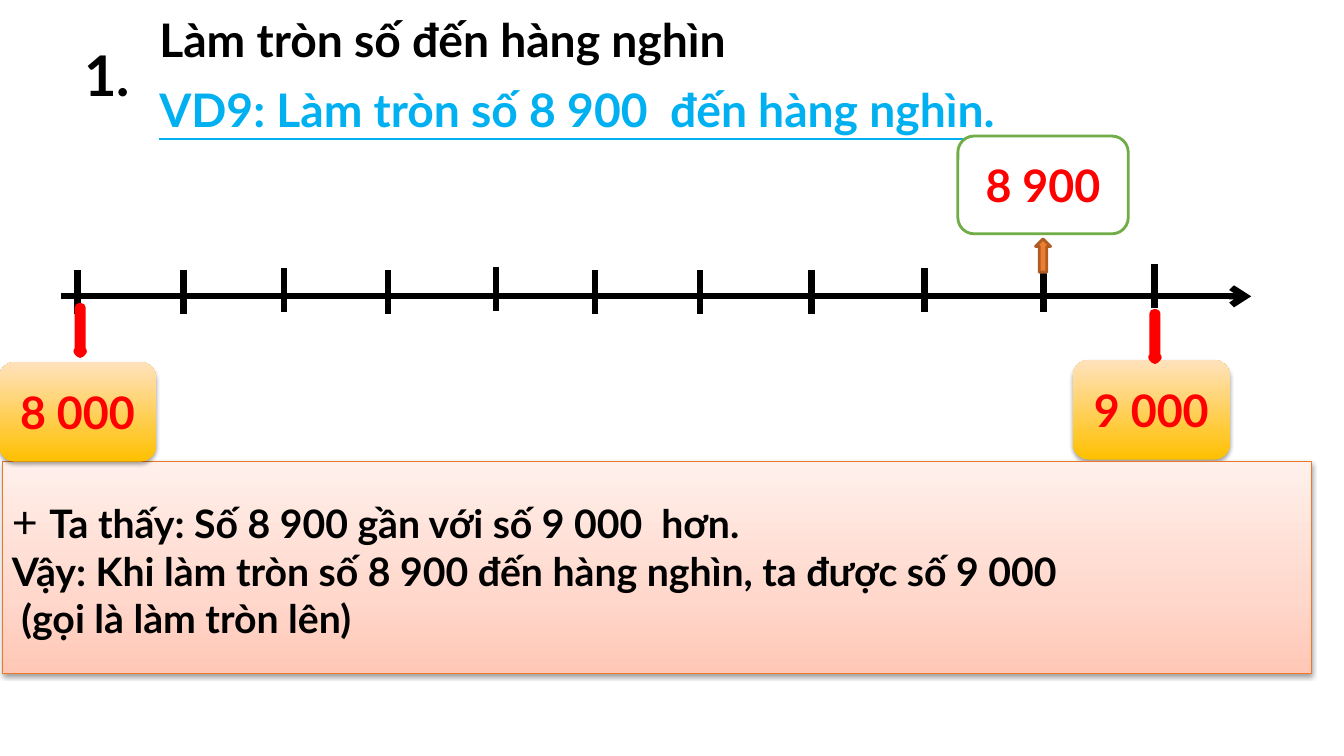
import pptx
import pptx.dml.color
import pptx.enum.shapes
import pptx.enum.text
import pptx.oxml
import pptx.oxml.ns
import pptx.util
from pptx.util import Inches

SHAPES = pptx.enum.shapes.MSO_SHAPE
ALIGN = pptx.enum.text.PP_ALIGN
ANCHOR = pptx.enum.text.MSO_ANCHOR
QN = pptx.oxml.ns.qn
NAMESPACE = pptx.oxml.ns.nsdecls("a")

BLACK, RED, BLUE = "000000", "FF0000", "00B0F0"
GOLD_STOPS = [(0, "FFC000"), (100, "FFE2BD")]
PINK_STOPS = [(0, "FFC7B6"), (35, "FFD7CB"), (100, "FFF0EB")]

AXIS_Y = 2.94
TICK_LENGTH = 0.44
# Left position and top of each tick on the number line
TICKS = [(0.77, 2.68), (1.82, 2.68), (2.82, 2.66), (3.85, 2.68),
         (4.92, 2.65), (5.9, 2.68), (6.94, 2.68), (8.05, 2.68),
         (9.17, 2.66), (10.35, 2.66), (11.45, 2.62)]


def color(value):
    return pptx.dml.color.RGBColor.from_string(value)


def set_line(line, value, width):
    line.color.rgb = color(value)
    line.width = pptx.util.Pt(width)


def add_run(paragraph, text, size, value=BLACK, **formats):
    run = paragraph.add_run()
    run.text = text
    run.font.color.rgb = color(value)
    formats = {"name": "Lato", "size": pptx.util.Pt(size), "bold": True, **formats}
    for name, setting in formats.items():
        setattr(run.font, name, setting)


def write_paragraphs(frame, paragraphs, alignment, spacing=None):
    """Each paragraph is a list of (text, size, color, formats) runs."""
    frame.word_wrap = True
    for index, runs in enumerate(paragraphs):
        paragraph = frame.add_paragraph() if index else frame.paragraphs[0]
        paragraph.alignment = alignment
        if spacing:
            paragraph.line_spacing = pptx.util.Pt(spacing)
        for text, size, value, formats in runs:
            add_run(paragraph, text, size, value, **formats)


def add_text(slide, box, paragraphs, alignment, spacing):
    frame = slide.shapes.add_textbox(*map(Inches, box)).text_frame
    for side in ("left", "top", "right", "bottom"):
        setattr(frame, f"margin_{side}", 0)
    write_paragraphs(frame, paragraphs, alignment, spacing)


def add_connector(slide, start, end, arrow=False):
    connector = slide.shapes.add_connector(
        pptx.enum.shapes.MSO_CONNECTOR.STRAIGHT, *map(Inches, start + end))
    set_line(connector.line, BLACK, 4.5)
    if arrow:
        connector.line._get_or_add_ln().append(
            pptx.oxml.parse_xml(f'<a:tailEnd {NAMESPACE} type="arrow"/>'))
    connector._element.spPr.append(
        pptx.oxml.parse_xml(f"<a:effectLst {NAMESPACE}/>"))


def set_gradient(shape, stops):
    shape.fill.gradient()
    shape.fill.gradient_angle = 90
    stop_list = shape._element.spPr.find(QN("a:gradFill")).find(QN("a:gsLst"))
    for stop in list(stop_list):
        stop_list.remove(stop)
    for position, value in stops:
        stop_list.append(pptx.oxml.parse_xml(
            f'<a:gs {NAMESPACE} pos="{position * 1000}">'
            f'<a:srgbClr val="{value}"/></a:gs>'))


def add_shadow(shape, opacity, distance):
    blur, offset = pptx.util.Pt(3.1), pptx.util.Pt(distance)
    shape._element.spPr.find(QN("a:effectLst")).append(pptx.oxml.parse_xml(
        f'<a:outerShdw {NAMESPACE} blurRad="{blur}" dist="{offset}" '
        f'dir="5400000" rotWithShape="0"><a:srgbClr val="000000">'
        f'<a:alpha val="{opacity * 1000}"/></a:srgbClr></a:outerShdw>'))


def add_shape(slide, kind, box, fill, line=None):
    """Fill is a hex string, or a list of gradient stops."""
    shape = slide.shapes.add_shape(kind, *map(Inches, box))
    shape.shadow.inherit = False
    if isinstance(fill, str):
        shape.fill.solid()
        shape.fill.fore_color.rgb = color(fill)
    else:
        set_gradient(shape, fill)
    if line:
        set_line(shape.line, *line)
    else:
        shape.line.fill.background()
    shape.text_frame.vertical_anchor = ANCHOR.MIDDLE
    return shape


def add_number(slide, box, text, fill, line=None):
    shape = add_shape(slide, SHAPES.ROUNDED_RECTANGLE, box, fill, line)
    write_paragraphs(shape.text_frame, [[(text, 32, RED, {})]], ALIGN.CENTER)
    return shape


def add_end_number(slide, left, top, text):
    shape = add_number(slide, (left, top, 1.56, 0.99), text, GOLD_STOPS)
    add_shadow(shape, 35, 1.8)


def add_conclusion(slide):
    shape = add_shape(slide, SHAPES.RECTANGLE, (0.02, 4.58, 12.99, 2.1),
                      PINK_STOPS, ("EC792B", 0.75))
    add_shadow(shape, 38, 1.6)
    write_paragraphs(shape.text_frame, [
        [("+ ", 32, BLACK, {"bold": False}),
         ("Ta thấy: Số 8 900 gần với số 9 000  hơn.", 28, BLACK, {})],
        [("Vậy: Khi làm tròn số 8 900 đến hàng nghìn, ta được số 9 000",
          28, BLACK, {})],
        [(" (gọi là làm tròn lên)", 28, BLACK, {})],
    ], ALIGN.JUSTIFY)


def main():
    presentation = pptx.Presentation()
    presentation.slide_width = Inches(13.33)
    presentation.slide_height = Inches(7.5)
    slide = presentation.slides.add_slide(presentation.slide_layouts[6])

    # Heading and its number
    add_text(slide, (1.58, -0.02, 10.48, 1.37), [
        [("Làm tròn số đến hàng nghìn", 33, BLACK, {})],
        [("VD9: Làm tròn số 8 900  đến hàng nghìn.", 33, BLUE,
          {"underline": True})],
    ], ALIGN.LEFT, 49.5)
    add_text(slide, (0.46, -1.06, 1.21, 1.73), [[("1.", 40, BLACK, {})]],
             ALIGN.CENTER, 152.9)

    # Number line
    add_connector(slide, (0.61, AXIS_Y), (12.41, AXIS_Y), arrow=True)
    for left, top in TICKS:
        add_connector(slide, (left, top), (left, top + TICK_LENGTH))

    # Numbers and the arrows that point to them
    add_end_number(slide, 10.64, 3.57, "9 000")
    for left, top in ((0.77, 3.05), (11.43, 3.11)):
        add_shape(slide, SHAPES.DOWN_ARROW, (left, top, 0.05, 0.46),
                  "5B9BD5", (RED, 6))
    add_number(slide, (9.5, 1.35, 1.69, 0.97), "8 900", "FFFFFF", ("70AD47", 2))

    # Conclusion
    add_conclusion(slide)
    add_end_number(slide, -0.01, 3.59, "8 000")
    add_shape(slide, SHAPES.UP_ARROW, (10.27, 2.37, 0.15, 0.33),
              "ED7D31", ("AF5C24", 2))

    presentation.save("out.pptx")


if __name__ == "__main__":
    main()
